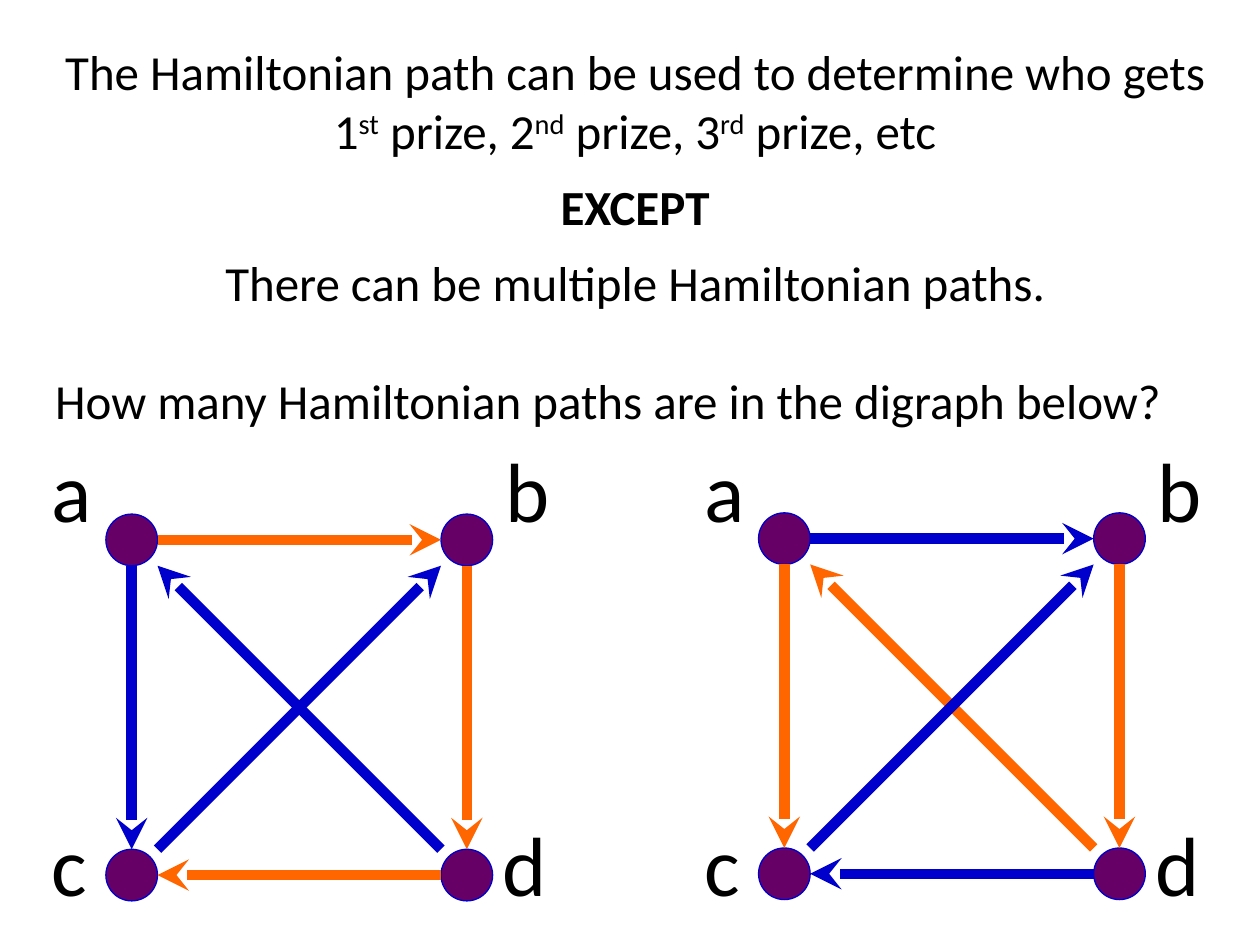
"""Builds a slide on Hamiltonian paths with two coloured digraphs."""
from lxml import etree
from pptx import Presentation
from pptx.dml.color import RGBColor
from pptx.enum.shapes import MSO_CONNECTOR, MSO_SHAPE
from pptx.enum.text import PP_ALIGN
from pptx.oxml.ns import qn
from pptx.util import Inches, Pt

STRAIGHT = MSO_CONNECTOR.STRAIGHT
ELLIPSE = MSO_SHAPE.OVAL
CENTER = PP_ALIGN.CENTER
LEFT = PP_ALIGN.LEFT

BLACK, PURPLE, BLUE, ORANGE = "000000", "660066", "0000CC", "FF6600"
DIAMETER = 0.41
SIDE = 2.66
NODES = {"a": (0, 0), "b": (1, 0), "c": (0, 1), "d": (1, 1)}
EDGES = ("ab", "ac", "dc", "bd", "da", "cb")

STATEMENT = [
    (CENTER, 0, [
        ("The Hamiltonian path can be used to determine who gets 1", ""),
        ("st", "super"), (" prize, 2", ""), ("nd", "super"),
        (" prize, 3", ""), ("rd", "super"), (" prize, etc", ""),
    ]),
    (CENTER, 9.8, [("EXCEPT", "bold")]),
    (CENTER, 9.8, [("There can be multiple Hamiltonian paths.", "")]),
    (LEFT, 34.2, [("How many Hamiltonian paths are in the digraph below?", "")]),
]


def colour(value):
    return RGBColor.from_string(value)


def sign(number):
    return (number > 0) - (number < 0)


class Sketch:
    font = "Calibri"

    def __init__(self, page):
        self.page = page

    def text(self, left, top, width, height, size, paragraphs):
        box = self.page.shapes.add_textbox(
            Inches(left), Inches(top), Inches(width), Inches(height))
        frame = box.text_frame
        frame.word_wrap = True
        for index, (align, gap, runs) in enumerate(paragraphs):
            para = frame.add_paragraph() if index else frame.paragraphs[0]
            para.alignment = align
            para.space_before = Pt(gap)
            for words, style in runs:
                span = para.add_run()
                span.text = words
                span.font.name = self.font
                span.font.size = Pt(size)
                span.font.bold = style == "bold"
                span.font.color.rgb = colour(BLACK)
                if style == "super":
                    span.font._element.set("baseline", "30000")
        return box

    def labels(self, left, top, names, tab):
        box = self.text(left, top, 4.71, 0.91, 48, [(LEFT, 0, [("\t".join(names), "")])])
        properties = box.text_frame.paragraphs[0]._p.get_or_add_pPr()
        stops = etree.SubElement(properties, qn("a:tabLst"))
        etree.SubElement(stops, qn("a:tab"), pos=str(Inches(tab)), algn="l")

    def node(self, left, top):
        dot = self.page.shapes.add_shape(
            ELLIPSE, Inches(left), Inches(top), Inches(DIAMETER), Inches(DIAMETER))
        dot.shadow.inherit = False
        dot.fill.solid()
        dot.fill.fore_color.rgb = colour(PURPLE)
        dot.line.color.rgb = colour(BLUE)
        dot.line.width = Pt(0.75)

    def arrow(self, start, end, ink):
        points = [Inches(value) for value in (*start, *end)]
        edge = self.page.shapes.add_connector(STRAIGHT, *points)
        edge.line.color.rgb = colour(ink)
        edge.line.width = Pt(6)
        etree.SubElement(edge.line._get_or_add_ln(), qn("a:tailEnd"), type="stealth")
        etree.SubElement(edge._element.spPr, qn("a:effectLst"))

    def digraph(self, left, top, label_left, highlighted):
        for column, row in NODES.values():
            self.node(left + column * SIDE, top + row * SIDE)
        radius = DIAMETER / 2
        for edge in EDGES:
            start, end = [], []
            for origin, source, target in zip((left, top), NODES[edge[0]], NODES[edge[1]]):
                offset = sign(target - source) * radius
                start.append(origin + radius + source * SIDE + offset)
                end.append(origin + radius + target * SIDE - offset)
            self.arrow(start, end, ORANGE if edge in highlighted else BLUE)
        self.labels(label_left, 3.43, "ab", 3.6)
        self.labels(label_left, 6.4, "cd", 3.58)


def main():
    deck = Presentation()
    deck.slide_width, deck.slide_height = Inches(10), Inches(7.5)
    sketch = Sketch(deck.slides.add_slide(deck.slide_layouts[6]))
    sketch.digraph(0.84, 4.08, 0.31, ("ab", "bd", "dc"))
    sketch.text(0.34, 0.28, 9.4, 3.2, 28, STATEMENT)
    sketch.digraph(6.02, 4.07, 5.49, ("bd", "da", "ac"))
    deck.save("out.pptx")


if __name__ == "__main__":
    main()
